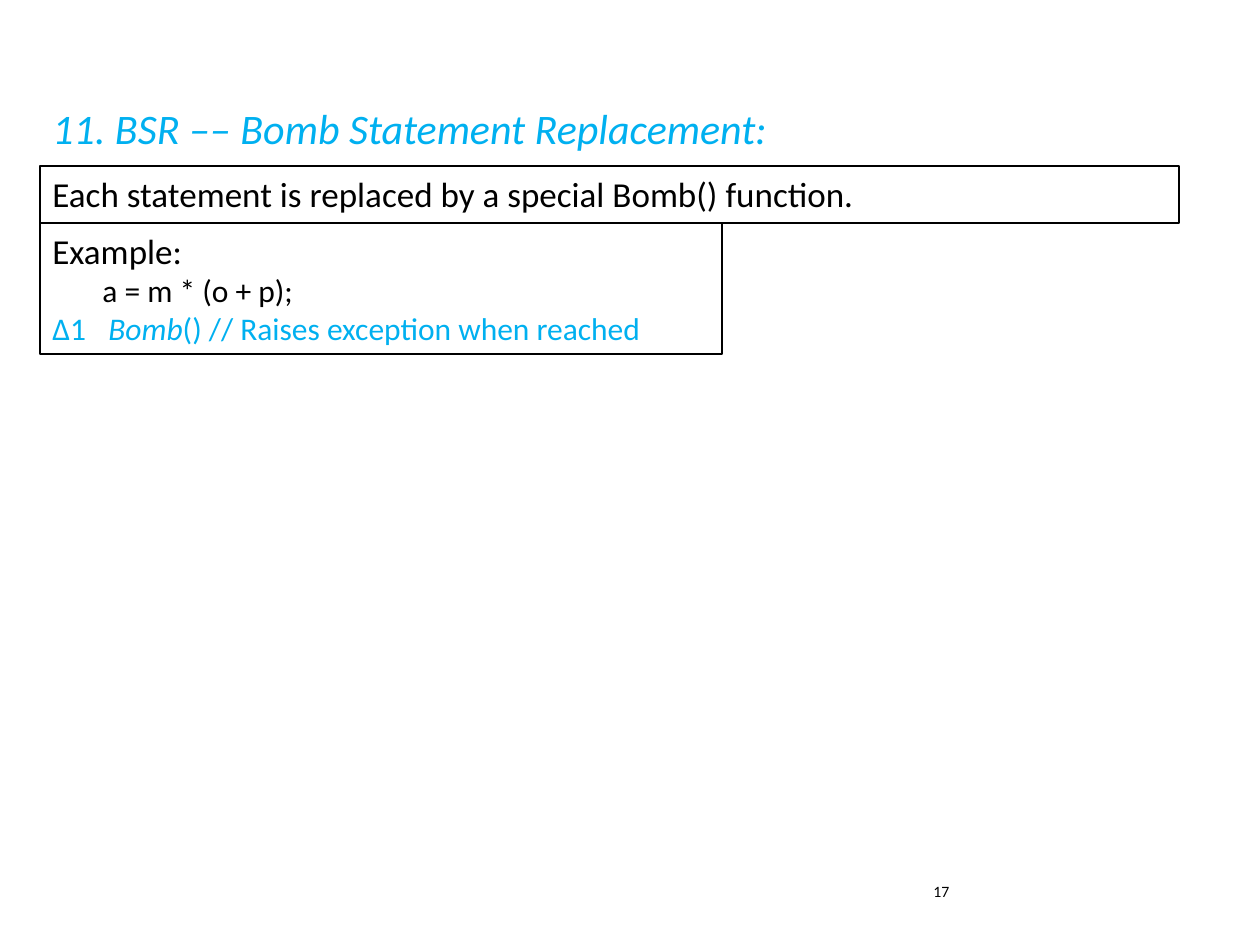
from pptx import Presentation
from pptx.dml.color import RGBColor
from pptx.enum.shapes import MSO_SHAPE
from pptx.enum.text import MSO_ANCHOR, PP_ALIGN
from pptx.util import Pt

RECT = MSO_SHAPE.RECTANGLE
TOP = MSO_ANCHOR.TOP
LEFT = PP_ALIGN.LEFT
BLACK, BLUE = "000000", "00B0F0"


def px(n):
    """Turn px into EMU."""
    return round(n * 914400 / 126)


def tint(code):
    """Turn a hex string into a colour."""
    return RGBColor.from_string(code)


class Page:
    """Hold the style and the current slide."""

    def __init__(self, slide, face):
        """Keep the slide and the font name."""
        self.slide, self.face = slide, face

    def letter(self, shape, paras):
        """Fill a shape with paragraphs of (size, colour, margin, indent, runs)."""
        frame = shape.text_frame
        frame.word_wrap, frame.vertical_anchor = True, TOP
        for i, (size, color, margin, indent, runs) in enumerate(paras):
            para = frame.add_paragraph() if i else frame.paragraphs[0]
            para.alignment = LEFT
            props = para._p.get_or_add_pPr()
            props.set("marL", str(px(margin)))
            props.set("indent", str(px(indent)))
            for words, slant in runs:
                run = para.add_run()
                run.text = words
                form = {"name": self.face, "size": Pt(size), "italic": slant}
                for key, value in form.items():
                    setattr(run.font, key, value)
                run.font.color.rgb = tint(color)

    def label(self, box, paras):
        """Add a plain text box."""
        self.letter(self.slide.shapes.add_textbox(*map(px, box)), paras)

    def frame(self, box, paras):
        """Add an outlined, unfilled box with text."""
        shape = self.slide.shapes.add_shape(RECT, *map(px, box))
        shape.shadow.inherit = False
        shape.fill.background()
        shape.line.color.rgb = tint(BLACK)
        shape.line.width = Pt(1.5)
        self.letter(shape, paras)


def main():
    """Build the slide and save it."""
    deck = Presentation()
    deck.slide_width, deck.slide_height = px(1260), px(945)
    page = Page(deck.slides.add_slide(deck.slide_layouts[6]), "Calibri")
    page.label((921, 876, 339, 50), [(9, BLACK, 0, 0, [("17", False)])])
    title = "11. BSR –– Bomb Statement Replacement:"
    page.label((40, 96, 1090, 74), [(24, BLUE, 39, -39, [(title, True)])])
    rule = "Each statement is replaced by a special Bomb() function."
    page.frame((40, 166, 1139, 57), [(20, BLACK, 0, 0, [(rule, False)])])
    bomb = [("∆1\t", False), ("Bomb", True),
            ("() // Raises exception when reached", False)]
    page.frame((40, 223, 682, 131), [
        (20, BLACK, 0, 0, [("Example:", False)]),
        (18, BLACK, 50, 0, [("a = m * (o + p);", False)]),
        (18, BLUE, 56, -56, bomb),
    ])
    deck.save("out.pptx")


if __name__ == "__main__":
    main()
